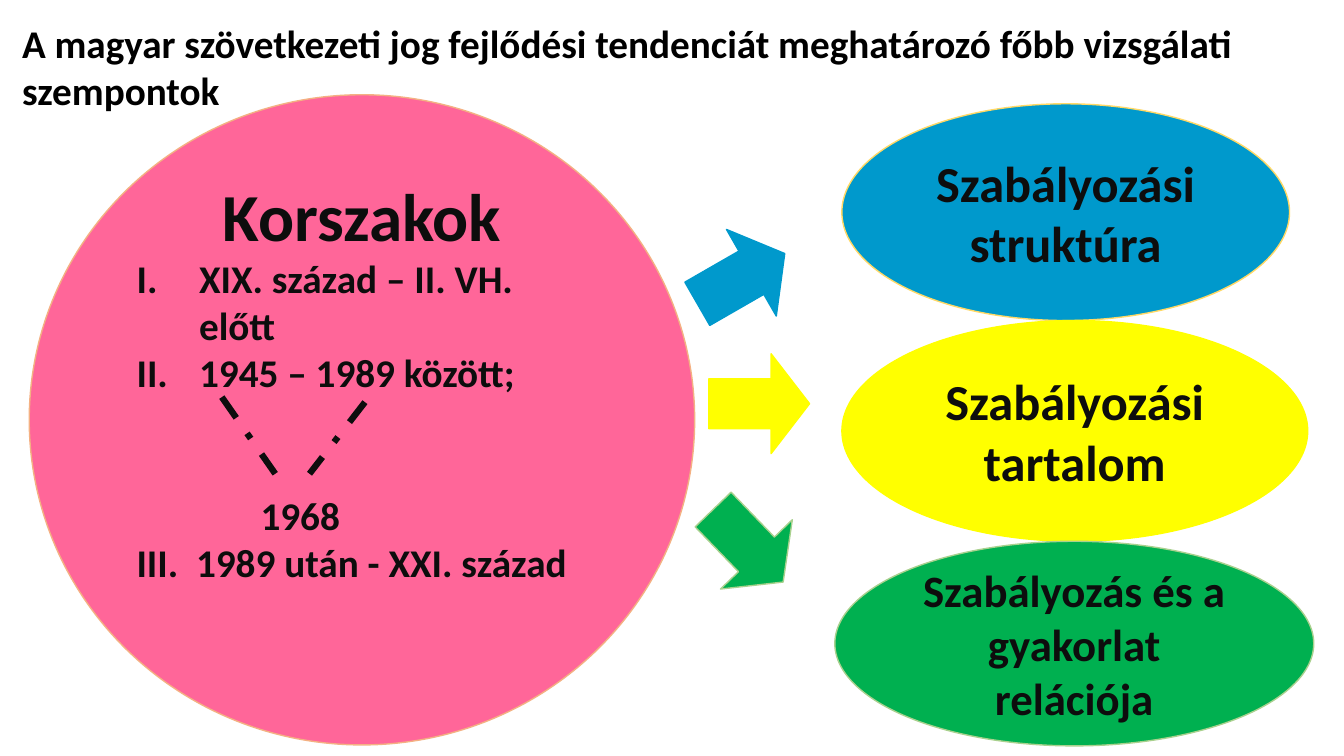
from lxml import etree
from pptx import Presentation
from pptx.dml.color import RGBColor
from pptx.enum.dml import MSO_LINE_DASH_STYLE as Dash
from pptx.enum.shapes import MSO_CONNECTOR as Connector, MSO_SHAPE as Shape
from pptx.enum.text import MSO_ANCHOR as Anchor, PP_ALIGN as Align
from pptx.oxml.ns import qn
from pptx.util import Inches, Pt

# Content
TITLE = [
    "A magyar szövetkezeti jog fejlődési tendenciát meghatározó főbb vizsgálati",
    "szempontok",
]
# text, size, alignment, left margin, first-line indent, space before, numbered
ERAS = [
    ("Korszakok", 48, Align.CENTER, 0, 0, 0, False),
    ("XIX. század – II. VH. előtt", 28, Align.LEFT, 0.62, -0.62, 0, True),
    ("1945 – 1989 között;", 28, Align.LEFT, 0.62, -0.62, 0, True),
    ("1968", 28, Align.LEFT, 1.23, 0, 68, False),
    ("III.\t1989 után - XXI. század", 28, Align.LEFT, 0.59, -0.59, 0, False),
]
ERA_CIRCLE = (0.29, 0.94, 6.6, 6.45)
# text, size, place, fill, outline
ASPECTS = [
    ("Szabályozási struktúra", 36, (8.35, 1.03, 4.44, 2.15), "0099CC", "FFD966"),
    ("Szabályozási tartalom", 36, (8.35, 3.18, 4.62, 2.19), "FFFF00", "FFFF00"),
    ("Szabályozás és a gyakorlat relációja", 32, (8.28, 5.37, 4.75, 2.03),
     "00B050", "A9D18E"),
]
# left, top, rotation, fill, outline
ARROWS = [
    (6.85, 2.27, 330.1, "0099CC", "0099CC"),
    (7.03, 3.51, 0, "FFFF00", "FFFF00"),
    (6.92, 4.92, 46, "00B050", "A9D18E"),
]
BRANCHES = [(2.2, 3.94, 2.73, 4.7), (3.62, 3.99, 3.07, 4.7)]
INK = "0D0D0D"


def color(value):
    return RGBColor.from_string(value)


def set_font(para, size, ink=INK):
    para.font.name = "Calibri"
    para.font.size = Pt(size)
    para.font.bold = True
    para.font.color.rgb = color(ink)


def add_shape(page, kind, place, fill, outline):
    shape = page.shapes.add_shape(kind, *map(Inches, place))
    shape.shadow.inherit = False
    shape.fill.solid()
    shape.fill.fore_color.rgb = color(fill)
    shape.line.color.rgb = color(outline)
    shape.line.width = Pt(1)
    shape.text_frame.word_wrap = True
    shape.text_frame.vertical_anchor = Anchor.MIDDLE
    return shape


def add_lines(frame, lines):
    for index, line in enumerate(lines):
        text, size, align, margin, indent, before, numbered = line
        para = frame.add_paragraph() if index else frame.paragraphs[0]
        para.text = text
        para.alignment = align
        if before:
            para.space_before = Pt(before)
        props = para._p.get_or_add_pPr()
        props.set("marL", str(Inches(margin)))
        props.set("indent", str(Inches(indent)))
        if numbered:
            bullet = etree.SubElement(props, qn("a:buAutoNum"))
            bullet.set("type", "romanUcPeriod")
        set_font(para, size)


deck = Presentation()
deck.slide_width, deck.slide_height = Inches(13.33), Inches(7.5)
page = deck.slides.add_slide(deck.slide_layouts[6])

# Circle of eras
circle = add_shape(page, Shape.OVAL, ERA_CIRCLE, "FF6699", "F4B183")
circle.text_frame.margin_bottom = Inches(0.85)
add_lines(circle.text_frame, ERAS)

# Aspects
for text, size, place, fill, outline in ASPECTS:
    oval = add_shape(page, Shape.OVAL, place, fill, outline)
    add_lines(oval.text_frame, [(text, size, Align.CENTER, 0, 0, 0, False)])

# Arrows towards the aspects
for left, top, rotation, fill, outline in ARROWS:
    arrow = add_shape(page, Shape.RIGHT_ARROW, (left, top, 1, 0.99), fill, outline)
    arrow.adjustments[0] = 0.5
    arrow.adjustments[1] = 0.385
    arrow.rotation = rotation

# Title
box = page.shapes.add_textbox(*map(Inches, (0.12, 0.14, 12.52, 1.04)))
box.text_frame.word_wrap = False
for index, text in enumerate(TITLE):
    para = box.text_frame.add_paragraph() if index else box.text_frame.paragraphs[0]
    para.text = text
    set_font(para, 28, "000000")

# Dashed branches to 1968
for ends in BRANCHES:
    branch = page.shapes.add_connector(Connector.STRAIGHT, *map(Inches, ends))
    branch.line.color.rgb = color(INK)
    branch.line.width = Pt(4.5)
    branch.line.dash_style = Dash.DASH_DOT
    etree.SubElement(branch._element.spPr, qn("a:effectLst"))

deck.save("out.pptx")
